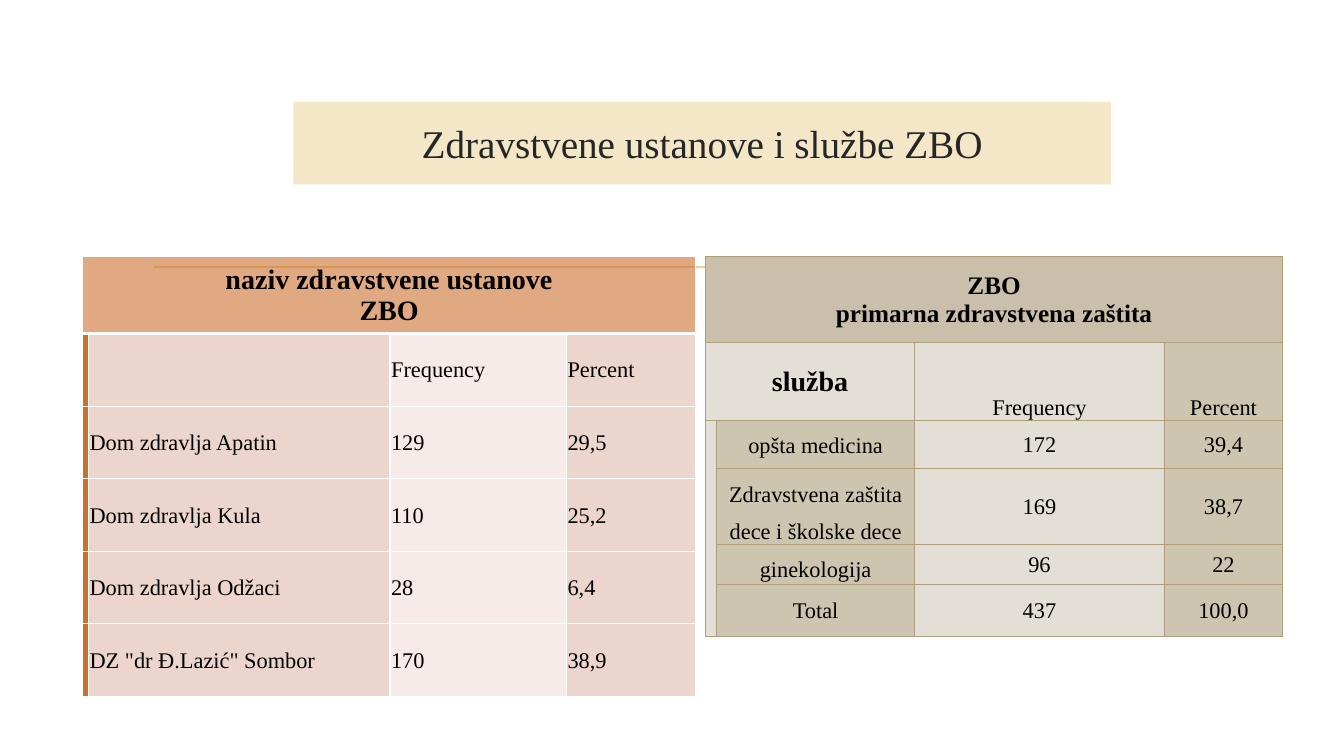
from lxml.etree import SubElement
from pptx import Presentation
from pptx.dml.color import RGBColor
from pptx.enum.shapes import MSO_CONNECTOR
from pptx.enum.text import MSO_ANCHOR, PP_ALIGN
from pptx.oxml import parse_xml
from pptx.oxml.ns import nsdecls, qn
from pptx.util import Inches, Pt

FONT = "Times New Roman"
BLACK = RGBColor(0x00, 0x00, 0x00)
WHITE = RGBColor(0xFF, 0xFF, 0xFF)
TITLE_TEXT = RGBColor(0x26, 0x26, 0x26)
GOLD = RGBColor(0xD9, 0xB2, 0x47)
PALE_GOLD = RGBColor(0xE8, 0xD1, 0x91)
ORANGE = RGBColor(0xCC, 0x70, 0x2D)
PINK = RGBColor(0xEC, 0xD5, 0xCD)
PALE_PINK = RGBColor(0xF6, 0xEB, 0xE8)
TAUPE = RGBColor(0xAE, 0x9E, 0x7C)
TAUPE_HEADER = RGBColor(0xC9, 0xBF, 0xAA)
TAUPE_MEDIUM = RGBColor(0xCE, 0xC5, 0xB1)
TAUPE_LIGHT = RGBColor(0xE3, 0xDF, 0xD7)

INSTITUTIONS = [
    ["naziv zdravstvene ustanove\nZBO", "", "", ""],
    ["", "", "Frequency", "Percent"],
    ["", "Dom zdravlja Apatin", "129", "29,5"],
    ["", "Dom zdravlja Kula", "110", "25,2"],
    ["", "Dom zdravlja Odžaci", "28", "6,4"],
    ["", 'DZ "dr Đ.Lazić" Sombor', "170", "38,9"],
]
SERVICES = [
    ["ZBO\nprimarna zdravstvena zaštita", "", "", ""],
    ["služba", "", "Frequency", "Percent"],
    ["", "opšta medicina", "172", "39,4"],
    ["", "Zdravstvena zaštita dece i školske dece", "169", "38,7"],
    ["", "ginekologija", "96", "22"],
    ["", "Total", "437", "100,0"],
]


def fill_solid(fill, color, opacity=100):
    fill.solid()
    fill.fore_color.rgb = color
    if opacity < 100:
        color_element = fill._xPr.find(qn("a:solidFill"))[0]
        SubElement(color_element, qn("a:alpha"), val=str(opacity * 1000))


def set_borders(cell, color, width, bottom_width):
    properties = cell._tc.get_or_add_tcPr()
    for index, side in enumerate("LRTB"):
        points = bottom_width if side == "B" else width
        properties.insert(index, parse_xml(
            f'<a:ln{side} {nsdecls("a")} w="{Pt(points)}"><a:solidFill>'
            f'<a:srgbClr val="{color}"/></a:solidFill></a:ln{side}>'))


def write_cell(cell, text, size=16, bold=False, align=PP_ALIGN.LEFT,
               anchor=MSO_ANCHOR.MIDDLE, line_spacing=None):
    cell.text = text
    cell.vertical_anchor = anchor
    cell.margin_left = cell.margin_right = cell.margin_top = Inches(0.01)
    cell.margin_bottom = 0
    for paragraph in cell.text_frame.paragraphs:
        paragraph.alignment = align
        paragraph.line_spacing = line_spacing
        paragraph.font.name = FONT
        paragraph.font.size = Pt(size)
        paragraph.font.bold = bold
        paragraph.font.color.rgb = BLACK


def add_grid(slide, left, top, widths, heights):
    """Add a table without banding, its first row merged into a header."""
    table = slide.shapes.add_table(
        len(heights), len(widths), Inches(left), Inches(top),
        Inches(sum(widths)), Inches(sum(heights))).table
    table.first_row = table.horz_banding = False
    for column, width in zip(table.columns, widths):
        column.width = Inches(width)
    for row, height in zip(table.rows, heights):
        row.height = Inches(height)
    table.cell(0, 0).merge(table.cell(0, len(widths) - 1))
    return table


def add_title(slide, text):
    title = slide.shapes.title
    title.left, title.top = Inches(2.91), Inches(1.01)
    title.width, title.height = Inches(8.11), Inches(0.82)
    fill_solid(title.fill, GOLD, 30)
    title.text_frame.text = text
    title.text_frame.vertical_anchor = MSO_ANCHOR.MIDDLE
    paragraph = title.text_frame.paragraphs[0]
    paragraph.alignment = PP_ALIGN.CENTER
    paragraph.font.name = FONT
    paragraph.font.size = Pt(28)
    paragraph.font.color.rgb = TITLE_TEXT


def add_rule(slide):
    rule = slide.shapes.add_connector(
        MSO_CONNECTOR.STRAIGHT, Inches(1.53), Inches(2.65), Inches(11.81), Inches(2.65))
    rule.line.color.rgb = PALE_GOLD
    rule.line.width = Pt(1.25)
    SubElement(rule._element.spPr, qn("a:effectLst"))


def add_institutions(slide):
    table = add_grid(slide, 0.82, 2.54, [0.05, 2.99, 1.75, 1.28], [0.77] + [0.72] * 5)
    column_colors = [ORANGE, PINK, PALE_PINK, PINK]
    for row, texts in enumerate(INSTITUTIONS):
        for column, text in enumerate(texts):
            cell = table.cell(row, column)
            if row == 0:
                write_cell(cell, text, 20, True, PP_ALIGN.CENTER)
                fill_solid(cell.fill, ORANGE, 60)
            else:
                write_cell(cell, text)
                fill_solid(cell.fill, column_colors[column])
            set_borders(cell, WHITE, 1, 3 if row == 0 else 1)


def add_services(slide):
    table = add_grid(slide, 7, 2.54, [0.11, 1.96, 2.48, 1.17],
                     [0.86, 0.77, 0.48, 0.75, 0.4, 0.51])
    table.cell(1, 0).merge(table.cell(1, 1))
    table.cell(2, 0).merge(table.cell(5, 0))
    column_colors = [TAUPE_LIGHT, TAUPE_MEDIUM, TAUPE_LIGHT, TAUPE_MEDIUM]
    for row, texts in enumerate(SERVICES):
        for column, text in enumerate(texts):
            cell = table.cell(row, column)
            style = {"align": PP_ALIGN.CENTER}
            if row == 0:
                style.update(size=18, bold=True)
            elif row == 1 and column == 0:
                style.update(size=20, bold=True)
            elif row == 1:
                style.update(anchor=MSO_ANCHOR.BOTTOM)
            elif column == 1:
                style.update(anchor=MSO_ANCHOR.TOP, line_spacing=1.5)
            write_cell(cell, text, **style)
            fill_solid(cell.fill, TAUPE_HEADER if row == 0 else column_colors[column])
            set_borders(cell, TAUPE, 0.75, 0.75)


def main():
    presentation = Presentation()
    presentation.slide_width = Inches(13.33)
    presentation.slide_height = Inches(7.5)
    slide = presentation.slides.add_slide(presentation.slide_layouts[5])
    add_rule(slide)
    add_title(slide, "Zdravstvene ustanove i službe ZBO")
    add_institutions(slide)
    add_services(slide)
    presentation.save("out.pptx")


if __name__ == "__main__":
    main()
